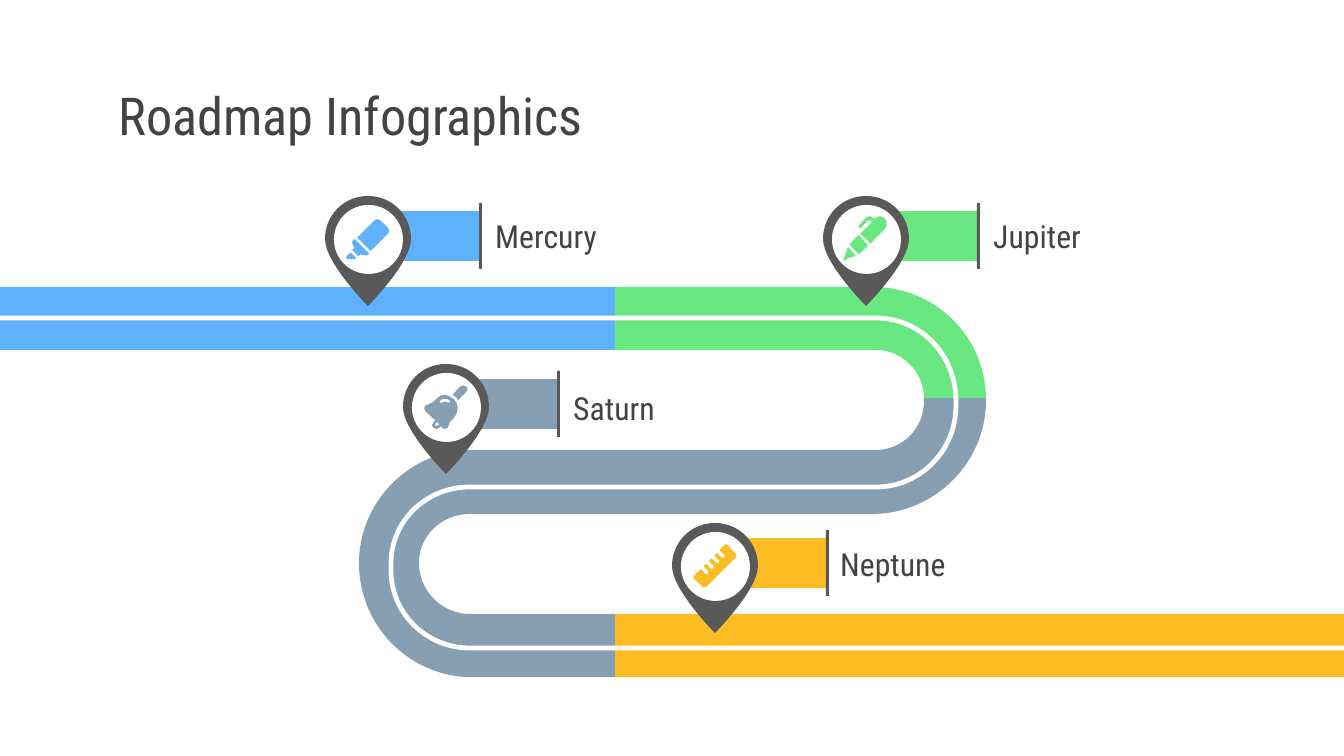
from lxml import etree
from pptx import Presentation
from pptx import util as u
from pptx.dml.color import RGBColor
from pptx.enum import shapes, text
from pptx.oxml.ns import qn

PX = 914400 / 134.4
FINE = PX / 10
FONT = "Roboto Condensed"
COLORS = {
    "blue": "5EB2FC",
    "green": "69E781",
    "slate": "869FB2",
    "amber": "FCBD24",
    "pin": "595959",
    "text": "434343",
    "white": "FFFFFF",
}

GREEN_ROAD = [[(615, 287), (615, 350), (876, 350), (902, 350, 924, 372, 924, 398),
               (986, 398), (985, 336, 935, 287, 873, 287)]]
SLATE_ROAD = [[(924, 398), (924, 401), (924, 428, 903, 450, 876, 450), (465, 450),
               (406, 454, 359, 504, 359, 563), (359, 624, 406, 673, 465, 677),
               (615, 677), (615, 614), (468, 614), (441, 613, 419, 590, 419, 563),
               (419, 536, 441, 515, 468, 514), (872, 514),
               (935, 514, 986, 462, 986, 401), (986, 398)]]
CENTRE_LINE = [[(1344, 648), (470, 648), (426, 648, 391, 613, 391, 570), (391, 564),
                (391, 521, 426, 487, 470, 487), (876, 487),
                (921, 487, 956, 450, 956, 406), (956, 401),
                (956, 355, 921, 318, 876, 318), (0, 318)]]
PIN = [[(0, -43), (-24, -43, -43, -24, -43, 0), (-43, 24, 0, 67, 0, 67),
        (0, 67, 43, 24, 43, 0), (43, -24, 24, -43, 0, -43)]]

HIGHLIGHTER = [
    [(-108, -13), (67, -188), (80, -201, 107, -201, 121, -188), (202, -108),
     (215, -94, 215, -67, 202, -54), (27, 121)],
    [(-134, 0), (-150, 13), (-165, 27, -165, 45, -148, 67),
     (-135, 81, -135, 94, -148, 105), (-161, 108), (-94, 175), (-81, 161),
     (-75, 148, -65, 148, -54, 161), (-27, 165, -10, 165, 0, 161), (13, 148)],
    [(-175, 134), (-215, 175), (-228, 185, -215, 202, -202, 202), (-134, 202),
     (-121, 202, -115, 190, -121, 185)],
]
PEN = [
    [(-180, 81), (-207, 161), (-222, 192), (-235, 210, -220, 222, -204, 215),
     (-180, 192), (-98, 172)],
    [(-72, -40), (-165, 54), (-72, 155), (22, 67)],
    [(35, -228), (15, -228, 8, -220, 0, -212), (-72, -134),
     (-85, -115, -70, -100, -54, -108), (22, -185), (30, -190, 40, -190, 48, -183),
     (62, -172), (-58, -52), (48, 45), (183, -94), (237, -148, 197, -228, 143, -228),
     (116, -228, 103, -215, 82, -202), (68, -215, 55, -228, 35, -228)],
]
BELL = [
    [(-13, -121), (-45, -121, -75, -108, -94, -81), (-134, -45),
     (-160, -27, -195, -22, -212, -10), (-220, 10, -215, 27, -208, 40),
     (-108, 134), (-121, 148), (-145, 165, -145, 195, -125, 212),
     (-108, 224, -80, 222, -62, 208), (-48, 188), (-40, 215),
     (-20, 222, 3, 220, 16, 210), (27, 190, 35, 170, 38, 152), (81, 108),
     (134, 40, 130, -54, 54, -94), (35, -112, 13, -121, -13, -121)],
    [(-13, -81), (5, -81, 25, -78, 43, -62), (50, -50, 37, -32, 22, -42),
     (3, -58, -27, -58, -46, -40), (-60, -32, -75, -50, -58, -65),
     (-45, -77, -30, -81, -13, -81)],
    [(-90, 150), (-67, 172), (-80, 185), (-87, 192, -100, 192, -107, 187),
     (-115, 180, -112, 170, -106, 165)],
    [(174, -215), (160, -215, 148, -212, 140, -202), (67, -121),
     (94, -108, 108, -94, 121, -67), (202, -148), (220, -165, 220, -190, 206, -202),
     (195, -212, 188, -215, 174, -215)],
]


def ruler():
    edge = [(-208, 98), (-222, 110, -222, 118, -208, 128), (-115, 215),
            (-108, 222, -100, 222, -93, 215), (215, -93),
            (222, -100, 222, -108, 215, -115), (122, -215),
            (115, -222, 107, -222, 100, -215)]
    for step in reversed(range(4)):
        x, y = -142 + 54 * step, 32 - 54 * step
        edge += [(x + 27, y - 27), (x + 75, y + 21),
                 (x + 90, y + 38, x + 65, y + 63, x + 48, y + 48), (x, y)]
    return [edge]


STOPS = [
    ("Mercury", "blue", (368, 239), (482, 204), HIGHLIGHTER),
    ("Jupiter", "green", (866, 239), (980, 204), PEN),
    ("Saturn", "slate", (446, 407), (560, 376), BELL),
    ("Neptune", "amber", (715, 566), (827, 532), ruler()),
]


def px(*lengths):
    return [u.Emu(round(length * PX)) for length in lengths]


def rgb(name):
    return RGBColor.from_string(COLORS[name])


def paint(shape, color):
    shape.shadow.inherit = False
    shape.fill.solid()
    shape.fill.fore_color.rgb = rgb(color)
    shape.line.fill.background()


def add_block(slide, box, color, kind=shapes.MSO_SHAPE.RECTANGLE):
    paint(slide.shapes.add_shape(kind, *px(*box)), color)


def bend(shape, contours):
    lines = iter(list(shape.element.iter(qn("a:lnTo"))))
    for segment in (part for contour in contours for part in contour[1:]):
        controls = [next(lines) for _ in range(len(segment) // 2)]
        if len(controls) == 3:
            curve = etree.Element(qn("a:cubicBezTo"))
            controls[0].addprevious(curve)
            for control in controls:
                curve.append(control[0])
                control.getparent().remove(control)


def draw_outline(slide, contours, origin=(0, 0), unit=PX, close=True):
    builder = None
    for contour in contours:
        points = [(part[i] * unit, part[i + 1] * unit)
                  for part in contour for i in range(0, len(part), 2)]
        if builder is None:
            builder = slide.shapes.build_freeform(*points[0])
        else:
            builder.move_to(*points[0])
        builder.add_line_segments(points[1:], close=close)
    shape = builder.convert_to_shape(*px(*origin))
    bend(shape, contours)
    return shape


def write(frame, words, size):
    frame.text = words
    frame.word_wrap = True
    frame.auto_size = text.MSO_AUTO_SIZE.NONE
    frame.vertical_anchor = text.MSO_ANCHOR.MIDDLE
    frame.margin_left = frame.margin_right = u.Inches(0.1)
    frame.margin_top = frame.margin_bottom = u.Inches(0.1)
    paragraph = frame.paragraphs[0]
    paragraph.alignment = text.PP_ALIGN.LEFT
    paragraph.font.name = FONT
    paragraph.font.size = u.Pt(size)
    paragraph.font.color.rgb = rgb("text")


def add_title(slide, words):
    title = slide.shapes.title
    title.left, title.top, title.width, title.height = px(105, 79, 1136, 71)
    write(title.text_frame, words, 28)


def add_road(slide):
    paint(draw_outline(slide, GREEN_ROAD), "green")
    add_block(slide, (0, 287, 615, 63), "blue")
    paint(draw_outline(slide, SLATE_ROAD), "slate")
    add_block(slide, (615, 614, 729, 63), "amber")
    marking = draw_outline(slide, CENTRE_LINE, close=False)
    marking.shadow.inherit = False
    marking.fill.background()
    marking.line.color.rgb = rgb("white")
    marking.line.width = u.Pt(2.56)


def add_stop(slide, name, color, centre, label_at, icon):
    x, y = centre
    add_block(slide, (x + 20, y - 28, 92, 50), color)
    add_block(slide, (x + 111, y - 36, 3, 66), "pin")
    paint(draw_outline(slide, PIN, centre), "pin")
    add_block(slide, (x - 34, y - 34, 69, 69), "white", shapes.MSO_SHAPE.OVAL)
    paint(draw_outline(slide, icon, centre, FINE), color)
    label = slide.shapes.add_textbox(*px(*label_at, 190, 63))
    write(label.text_frame, name, 17)


def main():
    deck = Presentation()
    deck.slide_width, deck.slide_height = px(1344, 756)
    slide = deck.slides.add_slide(deck.slide_layouts[5])
    add_title(slide, "Roadmap Infographics")
    add_road(slide)
    for stop in STOPS:
        add_stop(slide, *stop)
    deck.save("out.pptx")


if __name__ == "__main__":
    main()
